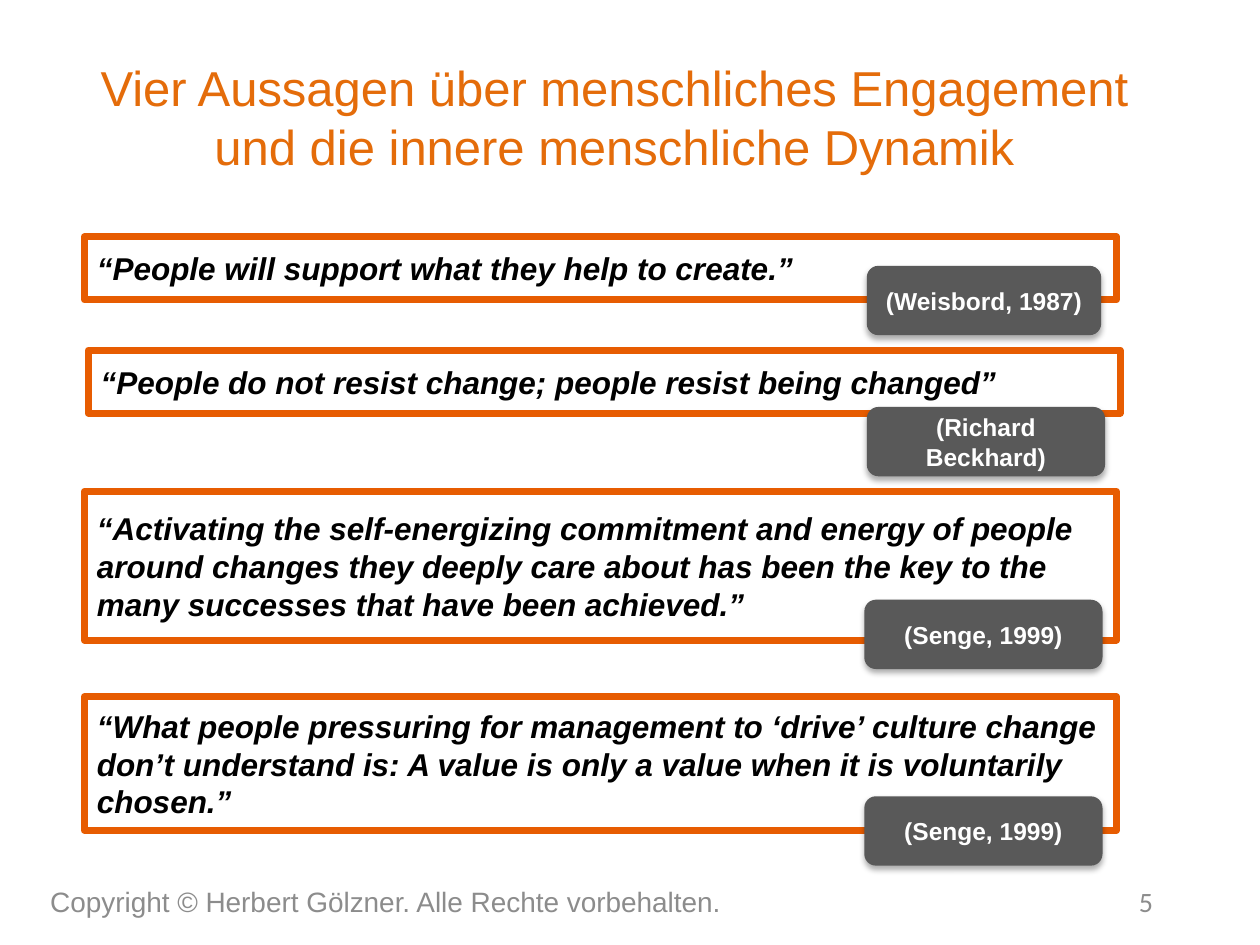
from typing import NamedTuple

from lxml.etree import SubElement
from pptx import Presentation
from pptx.dml.color import RGBColor
from pptx.enum.shapes import MSO_SHAPE as Preset
from pptx.enum.text import MSO_ANCHOR as Anchor, PP_ALIGN as Align
from pptx.oxml.ns import qn
from pptx.util import Emu, Pt

PX = 9144  # EMU per px, 100 px to the inch
COLORS = {
    "title": "E46C0A",
    "border": "E75C01",
    "quote": "000000",
    "source": "595959",
    "source_text": "FFFFFF",
    "footer": "8C8C8C",
    "shadow": "000000",
}


class Box(NamedTuple):
    left: int
    top: int
    width: int
    height: int

    def emu(self) -> list[Emu]:
        return [Emu(length * PX) for length in self]


class Style(NamedTuple):
    size: int
    color: str
    align: Align = Align.LEFT
    font: str = "Arial"
    bold: bool = False
    italic: bool = False


class Quote(NamedTuple):
    text: str
    box: Box
    source: str
    source_box: Box


TITLE = Style(28, "title", Align.CENTER)
QUOTE = Style(18, "quote", bold=True, italic=True)
SOURCE = Style(14, "source_text", Align.CENTER, bold=True)
COPYRIGHT = Style(16, "footer")
PAGE_NUMBER = Style(16, "footer", Align.RIGHT, "Calibri")

QUOTES = [
    Quote("“People will support what they help to create.”",
          Box(67, 188, 819, 50), "(Weisbord, 1987)", Box(688, 211, 186, 55)),
    Quote("“People do not resist change; people resist being changed”",
          Box(70, 278, 819, 50), "(Richard Beckhard)", Box(688, 323, 189, 55)),
    Quote("“Activating the self-energizing commitment and energy of people around "
          "changes they deeply care about has been the key to the many successes "
          "that have been achieved.”",
          Box(67, 390, 819, 118), "(Senge, 1999)", Box(686, 476, 189, 55)),
    Quote("“What people pressuring for management to ‘drive’ culture change don’t "
          "understand is: A value is only a value when it is voluntarily chosen.”",
          Box(67, 553, 819, 106), "(Senge, 1999)", Box(686, 632, 189, 55)),
]


def color(name: str) -> RGBColor:
    return RGBColor.from_string(COLORS[name])


def write(shape, text: str, style: Style) -> None:
    frame = shape.text_frame
    frame.word_wrap = True
    frame.vertical_anchor = Anchor.MIDDLE
    para = frame.paragraphs[0]
    para.alignment = style.align
    span = para.add_run()
    span.text = text
    font = span.font
    font.name, font.size = style.font, Pt(style.size)
    font.bold, font.italic = style.bold, style.italic
    font.color.rgb = color(style.color)


def add_label(page, text: str, box: Box, style: Style) -> None:
    write(page.shapes.add_textbox(*box.emu()), text, style)


def add_quote(page, quote: Quote) -> None:
    frame = page.shapes.add_shape(Preset.RECTANGLE, *quote.box.emu())
    frame.shadow.inherit = False
    frame.fill.background()
    frame.line.color.rgb = color("border")
    frame.line.width = Pt(4)
    write(frame, quote.text, QUOTE)


def add_source(page, quote: Quote) -> None:
    badge = page.shapes.add_shape(Preset.ROUNDED_RECTANGLE, *quote.source_box.emu())
    badge.fill.solid()
    badge.fill.fore_color.rgb = color("source")
    badge.line.fill.background()
    add_shadow(badge)
    write(badge, quote.source, SOURCE)


def add_shadow(shape) -> None:
    """Give the shape a soft shadow that falls straight down."""
    shape.shadow.inherit = False
    effects = shape._element.spPr.find(qn("a:effectLst"))
    shadow = SubElement(effects, qn("a:outerShdw"), blurRad=str(Pt(3.5)),
                        dist=str(Pt(2.2)), dir="5400000", rotWithShape="0")
    tint = SubElement(shadow, qn("a:srgbClr"), val=COLORS["shadow"])
    SubElement(tint, qn("a:alpha"), val="32000")


def main() -> None:
    deck = Presentation()
    deck.slide_width, deck.slide_height = Emu(1000 * PX), Emu(750 * PX)
    page = deck.slides.add_slide(deck.slide_layouts[5])

    title = page.shapes.title
    title.left, title.top, title.width, title.height = Box(50, 30, 875, 125).emu()
    write(title, "Vier Aussagen über menschliches Engagement "
                 "und die innere menschliche Dynamik", TITLE)

    add_label(page, "Copyright © Herbert Gölzner. Alle Rechte vorbehalten.",
              Box(30, 695, 636, 40), COPYRIGHT)
    add_label(page, "5", Box(692, 695, 233, 40), PAGE_NUMBER)

    for quote in QUOTES:
        add_quote(page, quote)
    for quote in QUOTES:
        add_source(page, quote)

    deck.save("out.pptx")


if __name__ == "__main__":
    main()
